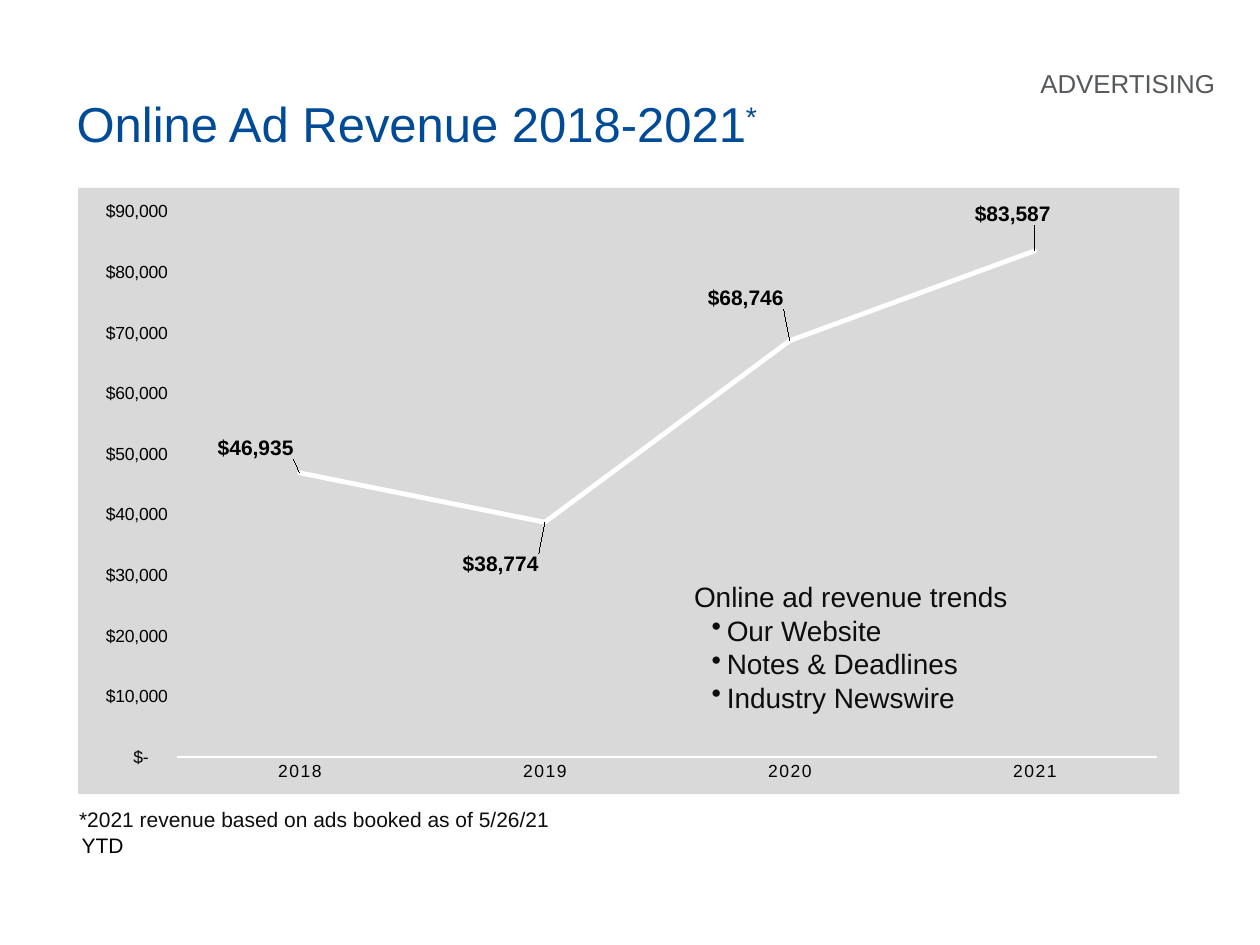
import pptx
import pptx.chart.data
import pptx.dml.color
import pptx.enum.chart
import pptx.enum.text
import pptx.oxml
import pptx.oxml.ns
import pptx.util
from lxml import etree

Inches = pptx.util.Inches
Pt = pptx.util.Pt

FONT = "Arial"
WHITE, BLACK, DARK = "FFFFFF", "000000", "0D0D0D"
YEARS = ["2018", "2019", "2020", "2021"]
REVENUE = [46935, 38774, 68746, 83587]
LABEL_OFFSETS = [(-0.04, -0.04), (-0.04, 0.07), (-0.04, -0.07), (-0.02, -0.06)]
CHART_BOX = (0.62, 1.49, 8.74, 4.81)
PLOT_AREA = (0.09, 0.04, 0.89, 0.9)
LABEL_FORMAT = '"$"#,##0'
AXIS_FORMAT = '_("$"* #,##0_);_("$"* \\(#,##0\\);_("$"* "-"??_);_(@_)'

TEXTS = [
    {"box": (1.12, 0.49, 8.62, 0.31), "lines": ["ADVERTISING"], "size": 14.8,
     "color": "56595C", "align": "RIGHT"},
    {"box": (0.51, 0.69, 5.69, 0.57), "lines": ["Online Ad Revenue 2018-2021"],
     "size": 28, "color": "004B98", "wrap": False, "superscript": "*"},
    {"box": (5.41, 4.55, 3.39, 1.18), "lines": ["Online ad revenue trends"],
     "bullets": ["Our Website", "Notes & Deadlines", "Industry Newswire"],
     "size": 16, "color": DARK},
    {"box": (0.53, 6.35, 5, 0.3),
     "lines": ["*2021 revenue based on ads booked as of 5/26/21"],
     "size": 12, "color": DARK},
    {"box": (0.55, 6.56, 0.54, 0.3), "lines": ["YTD"], "size": 12,
     "color": BLACK, "wrap": False},
]


def rgb(value):
    return pptx.dml.color.RGBColor.from_string(value)


def set_font(font, size, color, bold=False):
    for name, value in {"name": FONT, "size": Pt(size), "bold": bold}.items():
        setattr(font, name, value)
    font.color.rgb = rgb(color)


def add_bullet(paragraph):
    properties = paragraph._p.get_or_add_pPr()
    properties.set("marL", str(Inches(0.26)))
    properties.set("indent", str(Inches(-0.12)))
    bullet = etree.SubElement(properties, pptx.oxml.ns.qn("a:buChar"))
    bullet.set("char", "•")


def add_text(slide, item):
    shape = slide.shapes.add_textbox(*map(Inches, item["box"]))
    frame = shape.text_frame
    frame.word_wrap = item.get("wrap", True)
    frame.auto_size = pptx.enum.text.MSO_AUTO_SIZE.SHAPE_TO_FIT_TEXT
    bullets = item.get("bullets", [])
    lines = item["lines"] + bullets
    for index, line in enumerate(lines):
        paragraph = frame.add_paragraph() if index else frame.paragraphs[0]
        paragraph.alignment = getattr(pptx.enum.text.PP_ALIGN, item.get("align", "LEFT"))
        if index >= len(item["lines"]):
            add_bullet(paragraph)
        run = paragraph.add_run()
        run.text = line
        set_font(run.font, item["size"], item["color"])
    if "superscript" in item:
        run = paragraph.add_run()
        run.text = item["superscript"]
        set_font(run.font, item["size"], item["color"])
        run._r.get_or_add_rPr().set("baseline", "30000")


def manual_layout(values):
    layout = etree.Element(pptx.oxml.ns.qn("c:layout"))
    manual = etree.SubElement(layout, pptx.oxml.ns.qn("c:manualLayout"))
    for name, value in values.items():
        etree.SubElement(manual, pptx.oxml.ns.qn("c:" + name)).set("val", str(value))
    return layout


def style_axis(axis):
    axis.has_major_gridlines = False
    axis.major_tick_mark = pptx.enum.chart.XL_TICK_MARK.NONE
    axis.minor_tick_mark = pptx.enum.chart.XL_TICK_MARK.NONE
    set_font(axis.tick_labels.font, 10, BLACK)


def add_revenue_chart(slide):
    data = pptx.chart.data.CategoryChartData(number_format=LABEL_FORMAT)
    data.categories = YEARS
    data.add_series("Series 1", REVENUE)
    chart = slide.shapes.add_chart(
        pptx.enum.chart.XL_CHART_TYPE.LINE, *map(Inches, CHART_BOX), data).chart
    chart.has_legend = False
    chart.has_title = False
    set_font(chart.font, 10, BLACK)

    chart_space = chart._chartSpace
    fill = pptx.oxml.parse_xml(
        f'<c:spPr {pptx.oxml.ns.nsdecls("c", "a")}><a:solidFill><a:srgbClr val="D9D9D9"/>'
        '</a:solidFill><a:ln><a:noFill/></a:ln></c:spPr>')
    chart_space.chart.addnext(fill)

    plot_area = chart_space.chart.plotArea
    for layout in plot_area.findall(pptx.oxml.ns.qn("c:layout")):
        plot_area.remove(layout)
    plot_area.insert(0, manual_layout({
        "layoutTarget": "inner", "xMode": "edge", "yMode": "edge",
        **dict(zip("xywh", PLOT_AREA))}))

    category_axis, value_axis = chart.category_axis, chart.value_axis
    for axis in (category_axis, value_axis):
        style_axis(axis)
    category_axis.format.line.color.rgb = rgb(WHITE)
    category_axis.format.line.width = Pt(1)
    category_axis.tick_labels.font._rPr.set("spc", "100")
    value_axis.format.line.fill.background()
    for name, value in {"minimum_scale": 0, "maximum_scale": 90000,
                        "major_unit": 10000}.items():
        setattr(value_axis, name, value)
    value_axis.tick_labels.number_format = AXIS_FORMAT
    value_axis.tick_labels.number_format_is_linked = False

    plot = chart.plots[0]
    plot.vary_by_categories = False
    series = plot.series[0]
    series.smooth = False
    series.marker.style = pptx.enum.chart.XL_MARKER_STYLE.NONE
    series.format.line.color.rgb = rgb(WHITE)
    series.format.line.width = Pt(2.75)
    series.format.line._get_or_add_ln().set("cap", "rnd")

    center = pptx.enum.chart.XL_LABEL_POSITION.CENTER
    labels = series.data_labels
    for name, value in {"show_value": True, "position": center,
                        "number_format": LABEL_FORMAT,
                        "number_format_is_linked": False}.items():
        setattr(labels, name, value)
    set_font(labels.font, 12, BLACK, True)
    for index, offset in enumerate(LABEL_OFFSETS):
        label = series.points[index].data_label
        set_font(label.font, 12, BLACK, True)
        label.position = center
        label._get_or_add_dLbl().insert(1, manual_layout(dict(zip("xy", offset))))


def main():
    presentation = pptx.Presentation()
    presentation.slide_width = Inches(10)
    presentation.slide_height = Inches(7.5)
    slide = presentation.slides.add_slide(presentation.slide_layouts[6])
    add_revenue_chart(slide)
    for item in TEXTS:
        add_text(slide, item)
    presentation.save("out.pptx")


if __name__ == "__main__":
    main()
